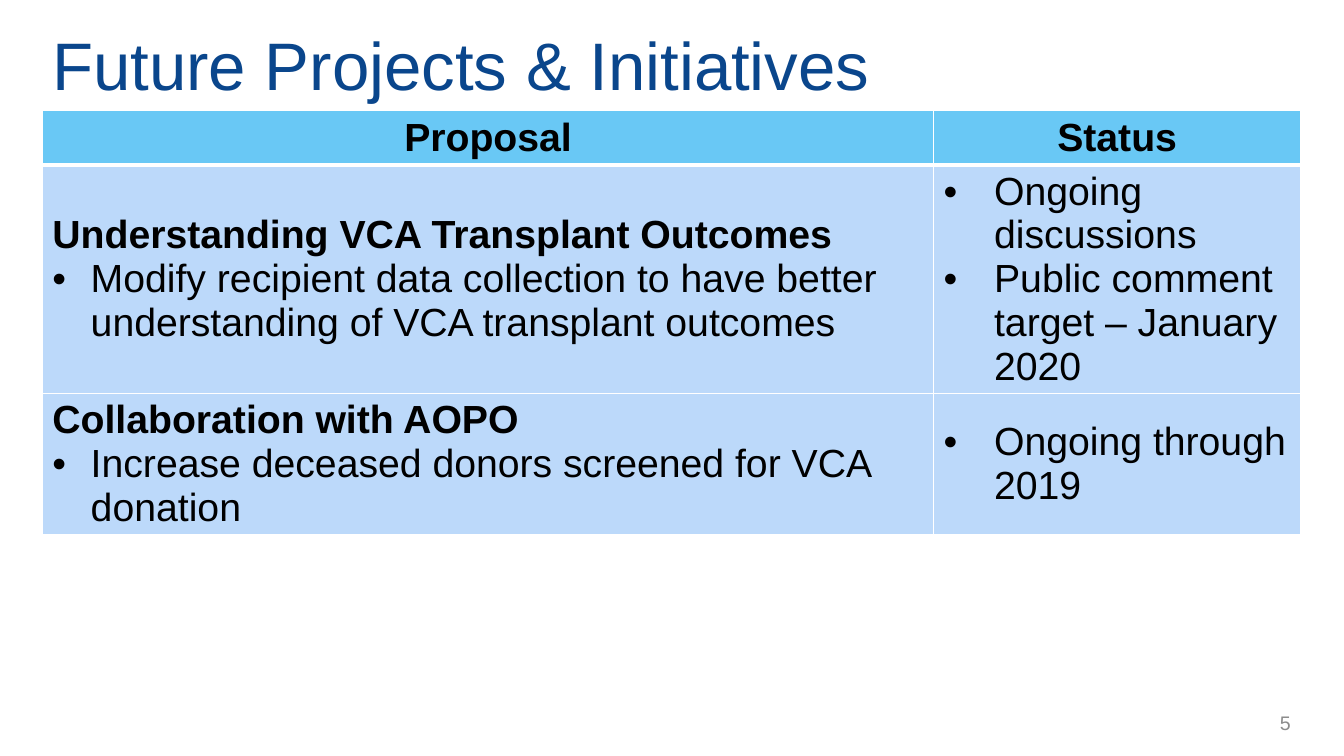
from lxml import etree
from pptx import Presentation
from pptx.dml.color import RGBColor
from pptx.enum.text import MSO_ANCHOR, PP_ALIGN
from pptx.oxml.ns import qn
from pptx.util import Inches, Pt

MIDDLE = MSO_ANCHOR.MIDDLE
LEFT, CENTER, RIGHT = PP_ALIGN.LEFT, PP_ALIGN.CENTER, PP_ALIGN.RIGHT

FONT = "Arial"
BLACK = RGBColor(0, 0, 0)
WHITE = RGBColor(255, 255, 255)
NAVY = RGBColor(0x0A, 0x46, 0x8C)
GRAY = RGBColor(0x8C, 0x8C, 0x8C)
HEADER_BLUE = RGBColor(0x69, 0xC8, 0xF5)
BODY_BLUE = RGBColor(0xBC, 0xD9, 0xFA)

TITLE = "Future Projects & Initiatives"
PAGE_NUMBER = "5"
HEADERS = ["Proposal", "Status"]
# Each project: name, proposal bullets, status bullets
PROJECTS = [
    ("Understanding VCA Transplant Outcomes",
     ["Modify recipient data collection to have better understanding of VCA transplant outcomes"],
     ["Ongoing discussions", "Public comment target – January 2020"]),
    ("Collaboration with AOPO",
     ["Increase deceased donors screened for VCA donation"],
     ["Ongoing through 2019"]),
]
COLUMN_WIDTHS = [8.84, 3.64]
ROW_HEIGHTS = [0.53, 2.27, 1.4]
PROPOSAL_INDENT, STATUS_INDENT = 0.38, 0.5
TABLE_TEXT_SIZE = 28
THIN, THICK = 1, 3


def add_text(para, text, size, color, bold=False, align=LEFT):
    para.alignment = align
    span = para.add_run()
    span.text = text
    span.font.name = FONT
    span.font.size = Pt(size)
    span.font.bold = bold
    span.font.color.rgb = color


def add_bullet(para, indent):
    """Give the paragraph a round bullet with a hanging indent in inches."""
    properties = para._p.get_or_add_pPr()
    properties.set("marL", str(Inches(indent)))
    properties.set("indent", str(-Inches(indent)))
    etree.SubElement(properties, qn("a:buFont")).set("typeface", FONT)
    etree.SubElement(properties, qn("a:buChar")).set("char", "•")


def set_borders(cell, top, bottom):
    """Draw white cell borders; top and bottom are widths in points."""
    properties = cell._tc.get_or_add_tcPr()
    widths = [("L", THIN), ("R", THIN), ("T", top), ("B", bottom)]
    for position, (side, width) in enumerate(widths):
        line = etree.Element(qn("a:ln" + side), w=str(Pt(width)))
        fill = etree.SubElement(line, qn("a:solidFill"))
        etree.SubElement(fill, qn("a:srgbClr")).set("val", str(WHITE))
        properties.insert(position, line)


def fill_cell(cell, lines, color, align=LEFT, top=THIN, bottom=THIN):
    """Write (text, bold, bullet indent) lines into a table cell."""
    cell.vertical_anchor = MIDDLE
    cell.fill.solid()
    cell.fill.fore_color.rgb = color
    set_borders(cell, top, bottom)
    frame = cell.text_frame
    for number, (text, bold, indent) in enumerate(lines):
        para = frame.add_paragraph() if number else frame.paragraphs[0]
        if indent:
            add_bullet(para, indent)
        add_text(para, text, TABLE_TEXT_SIZE, BLACK, bold, align)


def add_text_box(page, area, text, size, color, align=LEFT):
    box = page.shapes.add_textbox(*map(Inches, area))
    frame = box.text_frame
    frame.word_wrap = True
    frame.vertical_anchor = MIDDLE
    add_text(frame.paragraphs[0], text, size, color, align=align)


def add_project_table(page):
    shape = page.shapes.add_table(
        len(ROW_HEIGHTS), len(COLUMN_WIDTHS), Inches(0.42), Inches(1.1),
        Inches(sum(COLUMN_WIDTHS)), Inches(sum(ROW_HEIGHTS)))
    table = shape.table
    table.horz_banding = False
    for column, width in zip(table.columns, COLUMN_WIDTHS):
        column.width = Inches(width)
    for row, height in zip(table.rows, ROW_HEIGHTS):
        row.height = Inches(height)

    for column, header in enumerate(HEADERS):
        fill_cell(table.cell(0, column), [(header, True, 0)], HEADER_BLUE,
                  CENTER, bottom=THICK)
    for row, (name, proposals, statuses) in enumerate(PROJECTS, start=1):
        top = THICK if row == 1 else THIN
        proposal_lines = [(name, True, 0)]
        proposal_lines += [(text, False, PROPOSAL_INDENT) for text in proposals]
        status_lines = [(text, False, STATUS_INDENT) for text in statuses]
        for column, lines in enumerate([proposal_lines, status_lines]):
            fill_cell(table.cell(row, column), lines, BODY_BLUE, top=top)


def main():
    deck = Presentation()
    deck.slide_width, deck.slide_height = Inches(13.33), Inches(7.5)
    page = deck.slides.add_slide(deck.slide_layouts[6])
    add_project_table(page)
    add_text_box(page, (0.42, 0.17, 12.75, 0.93), TITLE, 48, NAVY)
    add_text_box(page, (10.64, 6.97, 2.26, 0.4), PAGE_NUMBER, 14, GRAY, RIGHT)
    deck.save("out.pptx")


if __name__ == "__main__":
    main()
